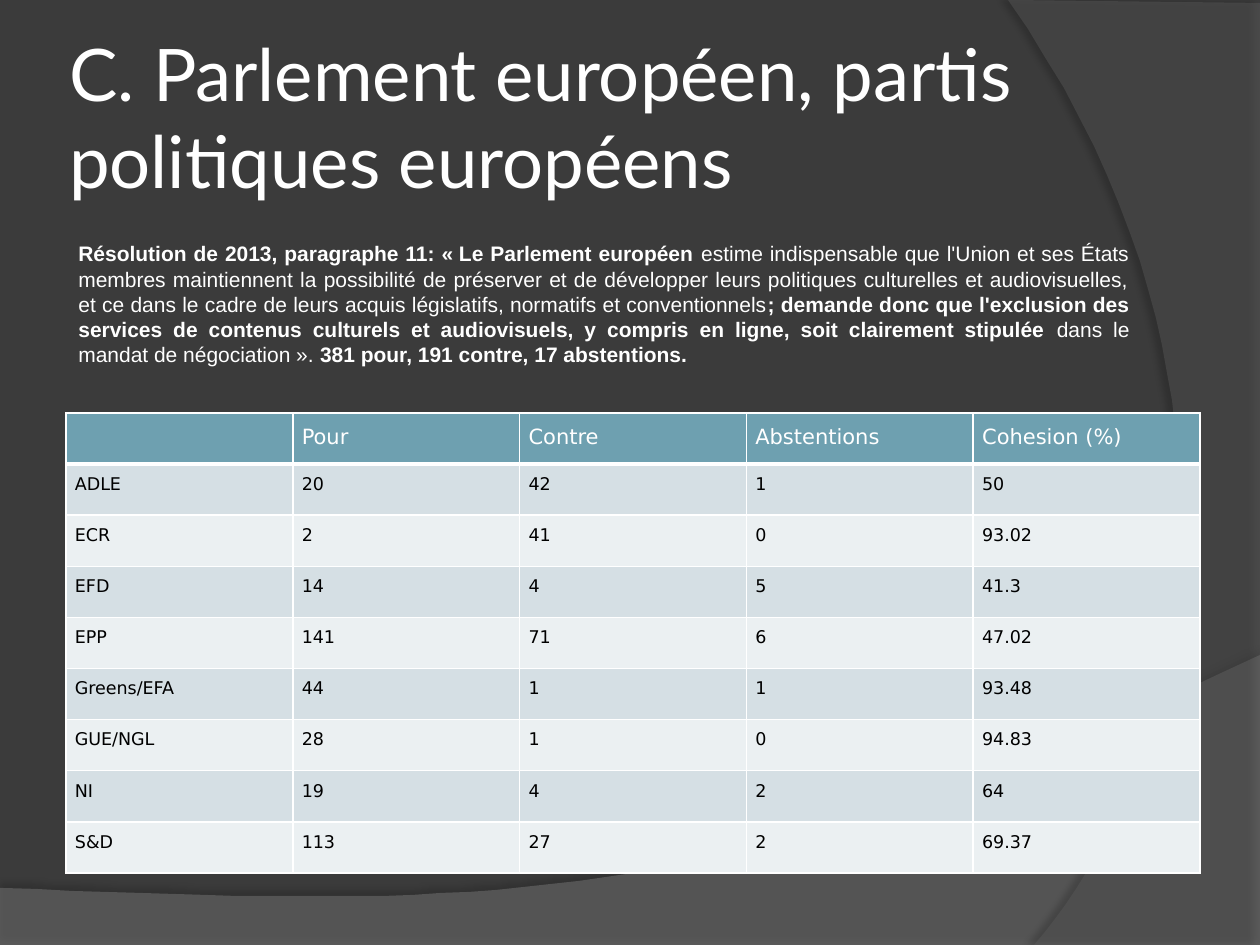
from lxml.etree import SubElement
from pptx import Presentation
from pptx.dml.color import RGBColor
from pptx.enum.text import MSO_ANCHOR as Anchor, MSO_AUTO_SIZE as AutoSize, PP_ALIGN as Align
from pptx.oxml import parse_xml
from pptx.oxml.ns import nsdecls, qn
from pptx.util import Emu, Pt

PX = 914400 / 126
COLORS = {
    "background": "3B3B3B", "bottom": "7F7F7F", "right": "5E5E5E",
    "header": "6EA0B0", "odd": "D5DFE4", "even": "EBF0F2",
    "white": "FFFFFF", "black": "000000",
}
TITLE = "C. Parlement européen, partis politiques européens"
RESOLUTION = [
    ("Résolution de 2013, paragraphe 11: «\u00a0Le Parlement européen ", True),
    ("estime indispensable que l'Union et ses États membres maintiennent la possibilité "
     "de préserver et de développer leurs politiques culturelles et audiovisuelles, et ce "
     "dans le cadre de leurs acquis législatifs, normatifs et conventionnels", False),
    ("; demande donc que l'exclusion des services de contenus culturels et audiovisuels, "
     "y compris en ligne, soit clairement stipulée ", True),
    ("dans le mandat de négociation\u00a0». ", False),
    ("381 pour, 191 contre, 17 abstentions. ", True),
]
VOTES = [
    ("", "Pour", "Contre", "Abstentions", "Cohesion (%)"),
    ("ADLE", "20", "42", "1", "50"),
    ("ECR", "2", "41", "0", "93.02"),
    ("EFD", "14", "4", "5", "41.3"),
    ("EPP", "141", "71", "6", "47.02"),
    ("Greens/EFA", "44", "1", "1", "93.48"),
    ("GUE/NGL", "28", "1", "0", "94.83"),
    ("NI", "19", "4", "2", "64"),
    ("S&D", "113", "27", "2", "69.37"),
]
WAVES = [
    dict(color="bottom", opacity=45, edges=[(0, 888), (0, 946), (1260, 946), (1260, 655)],
         curve=[(704, 919), (493, 906), (0, 888)], shadow=(35, 4, 3.5, 270)),
    dict(color="right", opacity=40, edges=[(1260, 3), (1260, 945), (1034, 945)],
         curve=[(1178, 780), (1283, 391), (1008, 0)], shadow=(45, 4, 4, 180)),
]
CURVE_STEPS = 40


def px(*lengths):
    return [Emu(round(length * PX)) for length in lengths]


def rgb(name):
    return RGBColor.from_string(COLORS[name])


def style(run, font, size, color, bold=False):
    run.font.name, run.font.size, run.font.bold = font, Pt(size), bold
    run.font.color.rgb = rgb(color)


def bezier(points):
    for step in range(1, CURVE_STEPS + 1):
        t = step / CURVE_STEPS
        weights = ((1 - t) ** 3, 3 * t * (1 - t) ** 2, 3 * t * t * (1 - t), t ** 3)
        yield tuple(sum(w * p[axis] for w, p in zip(weights, points)) for axis in (0, 1))


def add_wave(slide, depth, color, opacity, edges, curve, shadow):
    outline = edges[1:] + list(bezier(edges[-1:] + curve))
    builder = slide.shapes.build_freeform(*edges[0], scale=PX)
    builder.add_line_segments(outline, close=True)
    wave = builder.convert_to_shape()
    wave.fill.solid()
    wave.fill.fore_color.rgb = rgb(color)
    wave.line.fill.background()
    properties = wave._element.spPr
    fill = properties.find(qn("a:solidFill"))
    SubElement(fill[0], qn("a:alpha"), val=str(opacity * 1000))
    alpha, blur, distance, angle = shadow
    properties.append(parse_xml(
        f'<a:effectLst {nsdecls("a")}><a:outerShdw blurRad="{Pt(blur)}" dist="{Pt(distance)}" '
        f'dir="{angle * 60000}" rotWithShape="0"><a:srgbClr val="{COLORS["black"]}">'
        f'<a:alpha val="{alpha * 1000}"/></a:srgbClr></a:outerShdw></a:effectLst>'))
    slide.shapes._spTree.insert(2 + depth, wave._element)


def add_borders(cell, bottom):
    properties = cell._tc.get_or_add_tcPr()
    for position, (side, width) in enumerate(zip("LRTB", (1, 1, 1, bottom))):
        properties.insert(position, parse_xml(
            f'<a:ln{side} {nsdecls("a")} w="{Pt(width)}"><a:solidFill>'
            f'<a:srgbClr val="{COLORS["white"]}"/></a:solidFill></a:ln{side}>'))


def add_title(slide):
    title = slide.shapes.title
    title.left, title.top, title.width, title.height = px(63, 38, 1029, 157)
    frame = title.text_frame
    frame.text = TITLE
    frame.auto_size, frame.vertical_anchor = AutoSize.NONE, Anchor.MIDDLE
    frame.margin_left, frame.margin_top, frame.margin_right, frame.margin_bottom = px(6, 6, 6, 6)
    frame.paragraphs[0].alignment = Align.LEFT
    style(frame.paragraphs[0].runs[0], "Lato", 41.4, "white")


def add_votes(slide):
    rows, columns = len(VOTES), len(VOTES[0])
    table = slide.shapes.add_table(rows, columns, *px(66, 413, 1134, 460)).table
    for r, values in enumerate(VOTES):
        band = "header" if r == 0 else "odd" if r % 2 else "even"
        for c, value in enumerate(values):
            cell = table.cell(r, c)
            cell.fill.solid()
            cell.fill.fore_color.rgb = rgb(band)
            add_borders(cell, 1 if r else 3)
            cell.margin_left, cell.margin_top, cell.margin_right, cell.margin_bottom = px(9, 0, 9, 0)
            if value:
                cell.text_frame.text = value
                paragraph = cell.text_frame.paragraphs[0]
                paragraph.alignment, paragraph.line_spacing = Align.JUSTIFY, 1.5
                size, color = (10, "black") if r else (12, "white")
                style(paragraph.runs[0], "DejaVu Sans", size, color)


def add_resolution(slide):
    frame = slide.shapes.add_textbox(*px(66, 210, 1076, 190)).text_frame
    frame.word_wrap = True
    frame.margin_top, = px(31)
    paragraph = frame.paragraphs[0]
    paragraph.alignment = Align.JUSTIFY
    for passage, bold in RESOLUTION:
        run = paragraph.add_run()
        run.text = passage
        style(run, "Arial", 12, "white", bold)


def main():
    deck = Presentation()
    deck.slide_width, deck.slide_height = px(1260, 945)
    slide = deck.slides.add_slide(deck.slide_layouts[5])
    slide.background.fill.solid()
    slide.background.fill.fore_color.rgb = rgb("background")
    for depth, wave in enumerate(WAVES):
        add_wave(slide, depth, **wave)
    add_title(slide)
    add_votes(slide)
    add_resolution(slide)
    deck.save("out.pptx")


if __name__ == "__main__":
    main()
